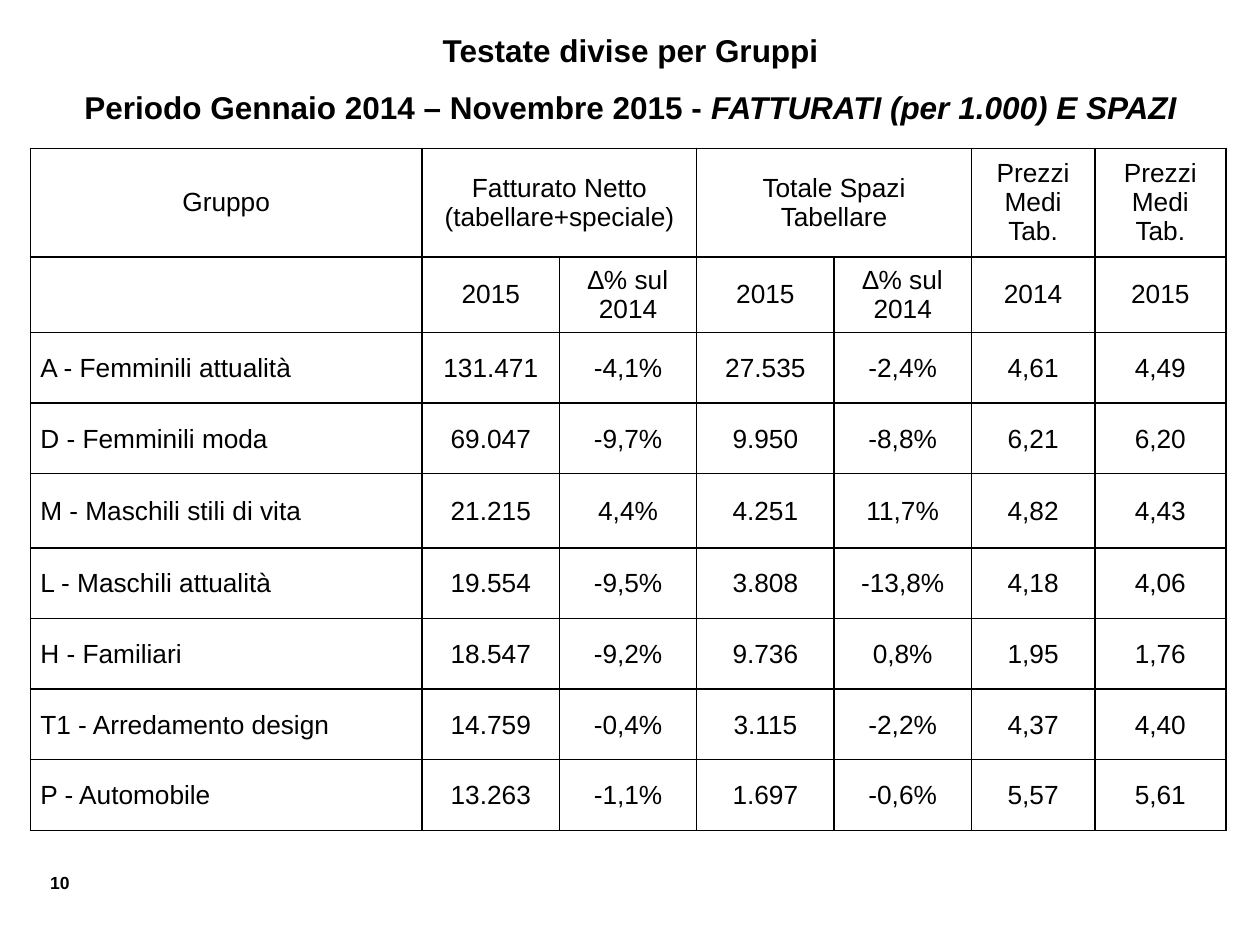
from dataclasses import dataclass

from lxml import etree
from pptx import Presentation
from pptx import util as u
from pptx.dml.color import RGBColor
from pptx.enum import text
from pptx.oxml import ns


@dataclass(frozen=True)
class Theme:
    font: str = "Arial"
    ink: str = "000000"
    title_size: int = 18
    table_size: int = 15
    number_size: int = 10
    border: int = 1


LEFT, CENTER, RIGHT = text.PP_ALIGN.LEFT, text.PP_ALIGN.CENTER, text.PP_ALIGN.RIGHT
HEADER_INSETS = (0.1, 0.05, 0.1, 0.05)
NAME_INSETS = (0.08, 0.01, 0.01, 0)
VALUE_INSETS = (0.01, 0.01, 0.01, 0)

# Columns and rows are percentages of the slide's width and height.
COLUMNS = [31.1] + [10.9] * 4 + [9.8, 10.4]
ROWS = [11.47, 8] + [7.47] * 2 + [7.87] + [7.47] * 4
HEADERS = [
    ["Gruppo", "Fatturato Netto (tabellare+speciale)", "",
     "Totale Spazi Tabellare", "", "Prezzi Medi Tab.", "Prezzi Medi Tab."],
    ["", "2015", "∆% sul 2014", "2015", "∆% sul 2014", "2014", "2015"],
]
GROUPS = [
    ["A - Femminili attualità", "131.471", "-4,1%", "27.535", "-2,4%", "4,61", "4,49"],
    ["D - Femminili moda", "69.047", "-9,7%", "9.950", "-8,8%", "6,21", "6,20"],
    ["M - Maschili stili di vita", "21.215", "4,4%", "4.251", "11,7%", "4,82", "4,43"],
    ["L - Maschili attualità", "19.554", "-9,5%", "3.808", "-13,8%", "4,18", "4,06"],
    ["H - Familiari", "18.547", "-9,2%", "9.736", "0,8%", "1,95", "1,76"],
    ["T1 - Arredamento design", "14.759", "-0,4%", "3.115", "-2,2%", "4,37", "4,40"],
    ["P - Automobile", "13.263", "-1,1%", "1.697", "-0,6%", "5,57", "5,61"],
]


class Deck:
    """Holds the theme and the current slide; places are percentages of the slide."""

    def __init__(self, theme):
        self.theme = theme
        self.prs = Presentation()
        self.prs.slide_width, self.prs.slide_height = u.Inches(10), u.Inches(7.5)
        self.s = self.prs.slides.add_slide(self.prs.slide_layouts[5])

    def x(self, percent):
        return round(self.prs.slide_width * percent / 100)

    def y(self, percent):
        return round(self.prs.slide_height * percent / 100)

    def box(self, left, top, width, height):
        return self.x(left), self.y(top), self.x(width), self.y(height)

    def style(self, p, size, align, bold=False):
        p.alignment = align
        p.font.name, p.font.size, p.font.bold = self.theme.font, u.Pt(size), bold
        p.font.color.rgb = RGBColor.from_string(self.theme.ink)

    def title(self, first, second, emphasis, place):
        sp = self.s.shapes.title
        sp.left, sp.top, sp.width, sp.height = self.box(*place)
        tf = sp.text_frame
        tf.auto_size = text.MSO_AUTO_SIZE.NONE
        tf.vertical_anchor = text.MSO_ANCHOR.MIDDLE
        p = tf.paragraphs[0]
        self.style(p, self.theme.title_size, CENTER, bold=True)
        p.line_spacing = 1.5
        p.add_run().text = first
        p.add_line_break()
        p.add_run().text = second
        r = p.add_run()
        r.text, r.font.italic = emphasis, True

    def number(self, label, place):
        tf = self.s.shapes.add_textbox(*self.box(*place)).text_frame
        tf.word_wrap = True
        p = tf.paragraphs[0]
        p.text = label
        self.style(p, self.theme.number_size, RIGHT, bold=True)

    def borders(self, cell):
        tc_pr = cell._tc.get_or_add_tcPr()
        for side in ("a:lnL", "a:lnR", "a:lnT", "a:lnB"):
            ln = etree.SubElement(tc_pr, ns.qn(side), w=str(u.Pt(self.theme.border)))
            fill = etree.SubElement(ln, ns.qn("a:solidFill"))
            etree.SubElement(fill, ns.qn("a:srgbClr"), val=self.theme.ink)

    def cell(self, cell, label, align, insets):
        self.borders(cell)
        cell.fill.background()
        cell.vertical_anchor = text.MSO_ANCHOR.MIDDLE
        (cell.margin_left, cell.margin_top,
         cell.margin_right, cell.margin_bottom) = map(u.Inches, insets)
        p = cell.text_frame.paragraphs[0]
        p.text = label
        self.style(p, self.theme.table_size, align)

    def table(self, left, top):
        place = self.box(left, top, sum(COLUMNS), sum(ROWS))
        table = self.s.shapes.add_table(len(ROWS), len(COLUMNS), *place).table
        table.first_row = table.horz_banding = False
        for column, width in zip(table.columns, COLUMNS):
            column.width = self.x(width)
        for row, height in zip(table.rows, ROWS):
            row.height = self.y(height)
        for i, labels in enumerate(HEADERS + GROUPS):
            for j, label in enumerate(labels):
                if i < len(HEADERS):
                    align, insets = CENTER, HEADER_INSETS
                elif j == 0:
                    align, insets = LEFT, NAME_INSETS
                else:
                    align, insets = CENTER, VALUE_INSETS
                self.cell(table.cell(i, j), label, align, insets)
        for j in (1, 3):
            table.cell(0, j).merge(table.cell(0, j + 1))


def main():
    deck = Deck(Theme())
    deck.number("10", (1.9, 91.6, 4.6, 3.6))
    deck.title("Testate divise per Gruppi",
               "Periodo Gennaio 2014 – Novembre 2015 - ",
               "FATTURATI (per 1.000) E SPAZI", (2, 0.2, 96.1, 14.2))
    deck.table(2.4, 15.7)
    deck.prs.save("out.pptx")


if __name__ == "__main__":
    main()
